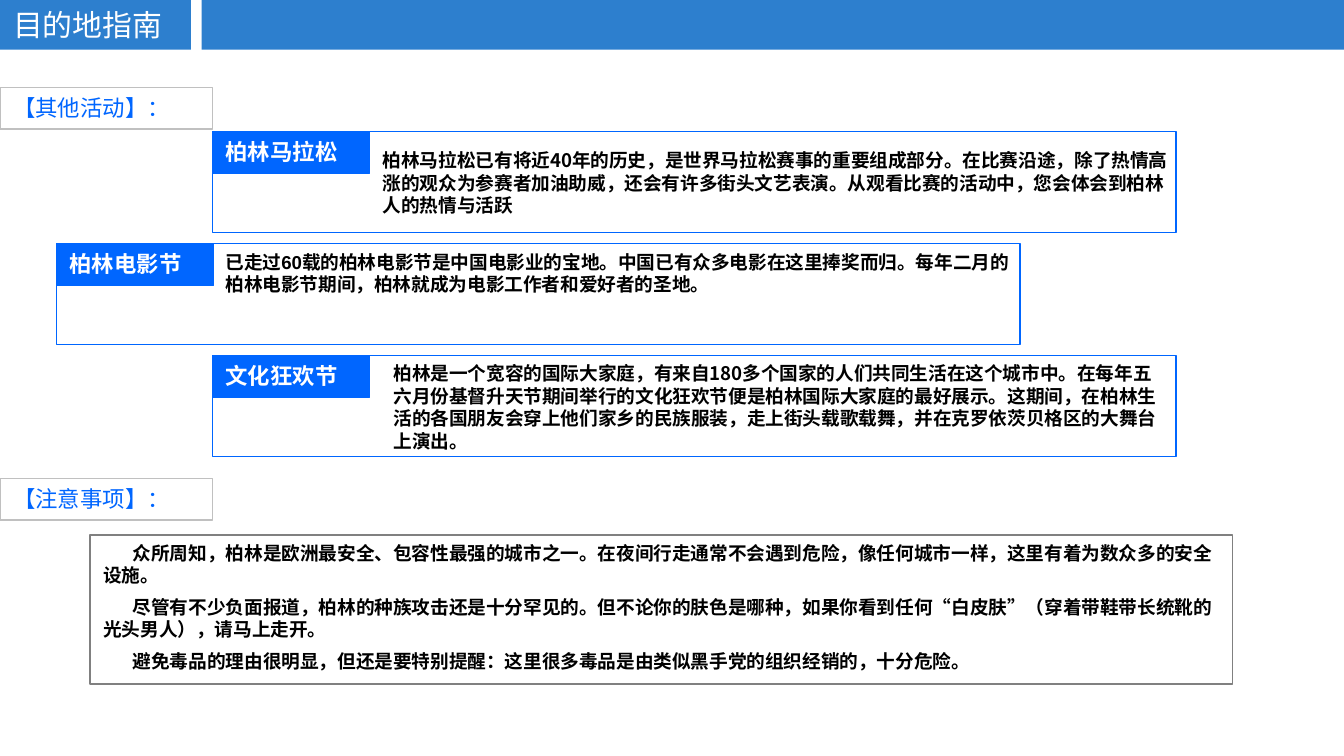
from typing import NamedTuple, Optional

from lxml import etree
from pptx import Presentation
from pptx.dml.color import RGBColor
from pptx.enum import shapes, text
from pptx.oxml import ns
from pptx.util import Inches, Pt

BAR_BLUE = RGBColor(0x2D, 0x7F, 0xCE)
BLUE = RGBColor(0x00, 0x66, 0xFF)
WHITE = RGBColor(0xFF, 0xFF, 0xFF)
BLACK = RGBColor(0x00, 0x00, 0x00)
SILVER = RGBColor(0xC0, 0xC0, 0xC0)
GRAY = RGBColor(0x80, 0x80, 0x80)

LATIN = "Arial"
CJK = "Noto Sans CJK SC"

PAGE_WIDTH = 10
PAGE_HEIGHT = PAGE_WIDTH * 9 / 16
LABEL_HEIGHT = 0.31
LABEL_WIDTH = 1.17
CARD_WIDTH, CARD_HEIGHT = 7.17, 0.75
CARD_GAP = CARD_HEIGHT / 9
CARD_TOP, CARD_PITCH = 0.98, CARD_HEIGHT + CARD_GAP


class Area(NamedTuple):
    left: float
    top: float
    width: float
    height: float

    def lengths(self) -> tuple:
        return tuple(Inches(value) for value in self)


class Style(NamedTuple):
    size: int
    color: RGBColor
    bold: bool = False
    font: str = LATIN
    indent: float = 0


class Activity(NamedTuple):
    name: str
    left: float
    body: str
    body_offset: tuple
    body_size: tuple
    font: str


TITLE = Style(16, WHITE)
HEADING = Style(12, BLUE)
LABEL = Style(12, WHITE, bold=True)
NOTE = Style(10, BLACK, bold=True, indent=0.22)

ACTIVITIES = [
    Activity("柏林马拉松", 1.58,
             "柏林马拉松已有将近40年的历史，是世界马拉松赛事的重要组成部分。在比赛沿途，"
             "除了热情高涨的观众为参赛者加油助威，还会有许多街头文艺表演。从观看比赛的活动中，"
             "您会体会到柏林人的热情与活跃",
             (1.17, 0.08), (6.08, 0.85), CJK),
    Activity("柏林电影节", 0.42,
             "已走过60载的柏林电影节是中国电影业的宝地。中国已有众多电影在这里捧奖而归。"
             "每年二月的柏林电影节期间，柏林就成为电影工作者和爱好者的圣地。",
             (1.16, 0), (6.08, 0.68), LATIN),
    Activity("文化狂欢节", 1.58,
             "柏林是一个宽容的国际大家庭，有来自180多个国家的人们共同生活在这个城市中。"
             "在每年五六月份基督升天节期间举行的文化狂欢节便是柏林国际大家庭的最好展示。"
             "这期间，在柏林生活的各国朋友会穿上他们家乡的民族服装，走上街头载歌载舞，"
             "并在克罗依茨贝格区的大舞台上演出。",
             (1.25, 0), (5.92, 0.77), CJK),
]

NOTES = [
    "众所周知，柏林是欧洲最安全、包容性最强的城市之一。在夜间行走通常不会遇到危险，"
    "像任何城市一样，这里有着为数众多的安全设施。",
    "尽管有不少负面报道，柏林的种族攻击还是十分罕见的。但不论你的肤色是哪种，"
    "如果你看到任何“白皮肤”（穿着带鞋带长统靴的光头男人），请马上走开。",
    "避免毒品的理由很明显，但还是要特别提醒：这里很多毒品是由类似黑手党的组织经销的，"
    "十分危险。",
]


def write(box, lines: list[str], style: Style) -> None:
    frame = box.text_frame
    frame.word_wrap = True
    frame.vertical_anchor = text.MSO_ANCHOR.TOP
    for index, line in enumerate(lines):
        para = frame.paragraphs[0] if index == 0 else frame.add_paragraph()
        para.text = line
        para.alignment = text.PP_ALIGN.LEFT
        if index:
            para.space_before = Pt(5)
        properties = para._p.get_or_add_pPr()
        if style.indent:
            properties.set("indent", str(Inches(style.indent)))
        font = para.font
        font.name = style.font
        font.size = Pt(style.size)
        font.bold = style.bold
        font.color.rgb = style.color
        latin = properties.find(ns.qn("a:defRPr")).find(ns.qn("a:latin"))
        east_asian = etree.Element(ns.qn("a:ea"), typeface=CJK)
        latin.addnext(east_asian)


def add_panel(page, area: Area, fill: Optional[RGBColor] = None,
              line: Optional[RGBColor] = None):
    """Add a rectangle; a missing colour means no fill or no outline."""
    panel = page.shapes.add_shape(shapes.MSO_SHAPE.RECTANGLE, *area.lengths())
    panel.shadow.inherit = False
    if fill is None:
        panel.fill.background()
    else:
        panel.fill.solid()
        panel.fill.fore_color.rgb = fill
    if line is None:
        panel.line.fill.background()
    else:
        panel.line.color.rgb = line
        panel.line.width = Pt(0.75)
    return panel


def add_heading(page, caption: str, top: float) -> None:
    panel = add_panel(page, Area(0, top, 1.58, LABEL_HEIGHT), WHITE, SILVER)
    write(panel, [caption], HEADING)


def add_activity(page, activity: Activity, top: float) -> None:
    left = activity.left
    label = add_panel(page, Area(left, top, LABEL_WIDTH, LABEL_HEIGHT), BLUE, BLUE)
    write(label, [activity.name], LABEL)
    add_panel(page, Area(left, top, CARD_WIDTH, CARD_HEIGHT), line=BLUE)
    right, down = activity.body_offset
    body_area = Area(left + right, top + down, *activity.body_size)
    body = page.shapes.add_textbox(*body_area.lengths())
    write(body, [activity.body], Style(10, BLACK, bold=True, font=activity.font))


def main() -> None:
    deck = Presentation()
    deck.slide_width, deck.slide_height = Inches(PAGE_WIDTH), Inches(PAGE_HEIGHT)
    page = deck.slides.add_slide(deck.slide_layouts[6])

    title = add_panel(page, Area(0, 0, 1.42, 0.37), BAR_BLUE)
    write(title, ["目的地指南"], TITLE)
    add_panel(page, Area(1.5, 0, 8.5, 0.37), BAR_BLUE)

    add_heading(page, "【其他活动】：", 0.65)
    for row, activity in enumerate(ACTIVITIES):
        add_activity(page, activity, CARD_TOP + row * CARD_PITCH)

    add_heading(page, "【注意事项】：", 3.56)
    notes = add_panel(page, Area(0.67, 3.98, 8.5, 1.11), line=GRAY)
    write(notes, NOTES, NOTE)

    deck.save("out.pptx")


if __name__ == "__main__":
    main()
